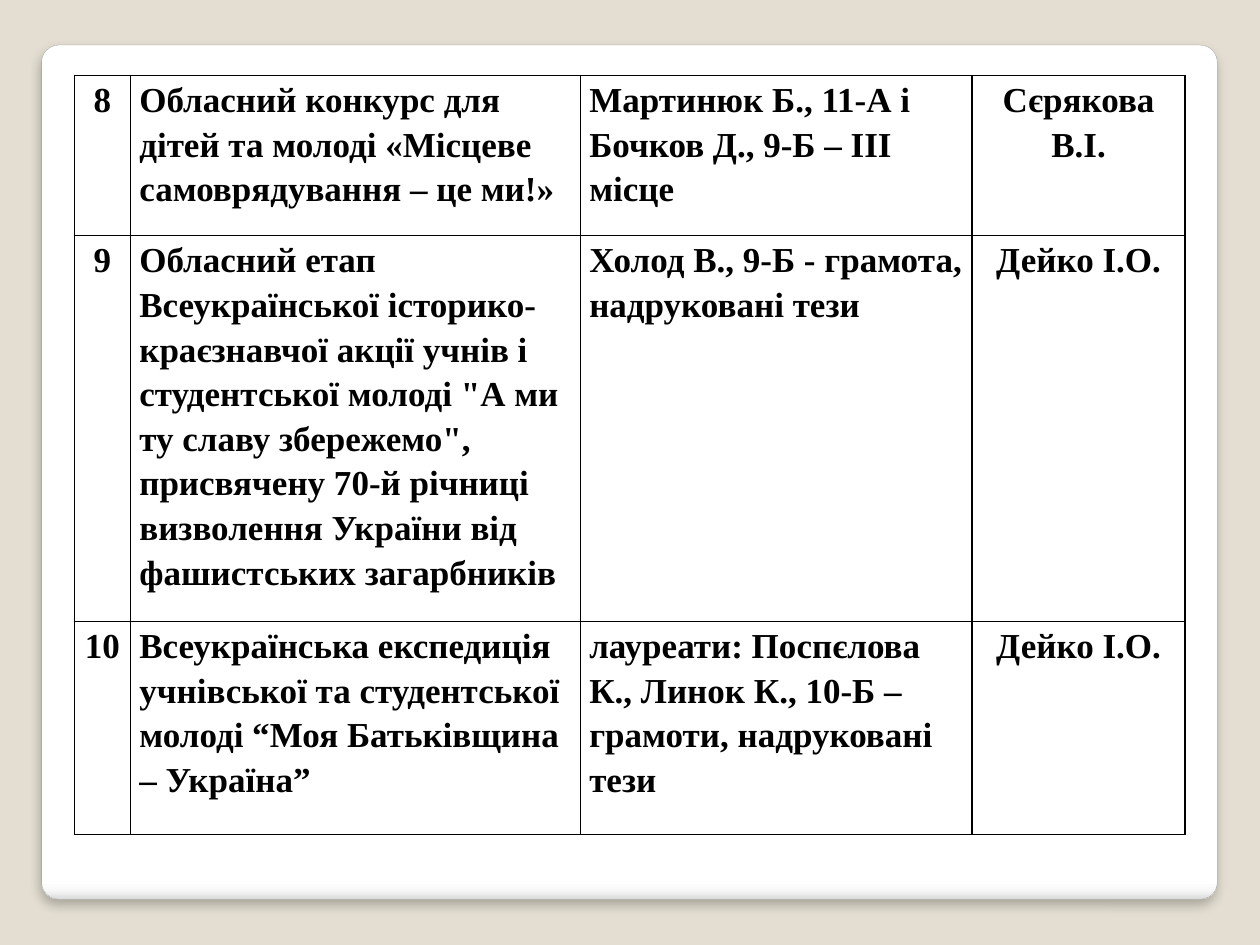
from lxml.etree import SubElement
from pptx import Presentation
from pptx.dml.color import RGBColor
from pptx.enum.shapes import MSO_SHAPE as Shape
from pptx.enum.text import PP_ALIGN as Align
from pptx.oxml.ns import qn
from pptx.util import Cm, Pt

BEIGE = RGBColor(0xE3, 0xDE, 0xD1)
WHITE = RGBColor(0xFF, 0xFF, 0xFF)
PALE = RGBColor(0xF7, 0xF7, 0xF7)
SILVER = RGBColor(0xDA, 0xDA, 0xDA)
GREY = RGBColor(0xA4, 0xA4, 0xA4)
BLACK = RGBColor(0, 0, 0)

PANEL_STOPS = [(0, WHITE), (98, WHITE), (99, PALE), (100, SILVER)]
FONT = {"name": "Times New Roman", "size": Pt(20), "bold": True}
CELL_FORMAT = {"margin_left": Cm(0.18), "margin_right": Cm(0.18),
               "margin_top": 0, "margin_bottom": 0}

COLUMN_WIDTHS = [1.13, 9.07, 7.9, 4.29]
COLUMN_ALIGNS = [Align.CENTER, Align.LEFT, Align.LEFT, Align.CENTER]
ROW_HEIGHTS = [3.23, 7.78, 4.29]
# A line break inside a cell starts a new paragraph
ROWS = [
    ["8",
     "Обласний конкурс для дітей та молоді «Місцеве самоврядування – це ми!»",
     "Мартинюк Б., 11-А і\nБочков Д., 9-Б – ІІІ місце",
     "Сєрякова В.І."],
    ["9",
     "Обласний етап Всеукраїнської історико-краєзнавчої акції учнів і "
     "студентської молоді \"А ми ту славу збережемо\", присвячену 70-й річниці "
     "визволення України від фашистських загарбників",
     "Холод В., 9-Б - грамота, надруковані тези",
     "Дейко І.О."],
    ["10",
     "Всеукраїнська експедиція учнівської та студентської молоді "
     "“Моя Батьківщина – Україна”",
     "лауреати: Поспєлова К., Линок К., 10-Б – грамоти, надруковані тези",
     "Дейко І.О."],
]


def set_values(target, values):
    for name, value in values.items():
        setattr(target, name, value)


def add_color(parent, color):
    return SubElement(parent, qn("a:srgbClr"), val=str(color))


def add_panel(page):
    panel = page.shapes.add_shape(Shape.ROUNDED_RECTANGLE, Cm(0.84), Cm(0.91),
                                  Cm(23.7), Cm(17.22))
    panel.adjustments[0] = 0.02
    panel.line.color.rgb = GREY
    panel.line.width = Pt(0.16)

    # Gradient running from top to bottom
    panel.fill.gradient()
    panel.fill.gradient_angle = 270
    stops = panel.element.spPr.find(".//" + qn("a:gsLst"))
    for stop in list(stops):
        stops.remove(stop)
    for percent, color in PANEL_STOPS:
        add_color(SubElement(stops, qn("a:gs"), pos=str(percent * 1000)), color)

    # Soft shadow below the panel
    panel.shadow.inherit = False
    effects = panel.element.spPr.find(qn("a:effectLst"))
    shadow = SubElement(effects, qn("a:outerShdw"), blurRad=str(Pt(6)),
                        dist=str(Pt(4)), dir="5400000", algn="t", rotWithShape="0")
    SubElement(add_color(shadow, BLACK), qn("a:alpha"), val="25000")


def add_borders(cell):
    properties = cell._tc.get_or_add_tcPr()
    for side in ("lnL", "lnR", "lnT", "lnB"):
        line = SubElement(properties, qn("a:" + side), w=str(Pt(1)))
        add_color(SubElement(line, qn("a:solidFill")), BLACK)


def fill_cell(cell, text, align):
    set_values(cell, CELL_FORMAT)
    add_borders(cell)
    cell.fill.background()
    cell.text_frame.text = text
    for para in cell.text_frame.paragraphs:
        set_values(para, {"alignment": align, "line_spacing": 1.15})
        for span in para.runs:
            set_values(span.font, FONT)
            span.font.color.rgb = BLACK


def add_results_table(page):
    table = page.shapes.add_table(
        len(ROWS), len(COLUMN_WIDTHS), Cm(1.5), Cm(1.52),
        Cm(sum(COLUMN_WIDTHS)), Cm(sum(ROW_HEIGHTS))).table
    set_values(table, {"first_row": False, "horz_banding": False})
    for column, width in zip(table.columns, COLUMN_WIDTHS):
        column.width = Cm(width)
    for row, height, texts in zip(table.rows, ROW_HEIGHTS, ROWS):
        row.height = Cm(height)
        for cell, text, align in zip(row.cells, texts, COLUMN_ALIGNS):
            fill_cell(cell, text, align)


def main():
    deck = Presentation()
    set_values(deck, {"slide_width": Cm(25.4), "slide_height": Cm(19.05)})
    page = deck.slides.add_slide(deck.slide_layouts[6])
    page.background.fill.solid()
    page.background.fill.fore_color.rgb = BEIGE
    add_panel(page)
    add_results_table(page)
    deck.save("out.pptx")


if __name__ == "__main__":
    main()
